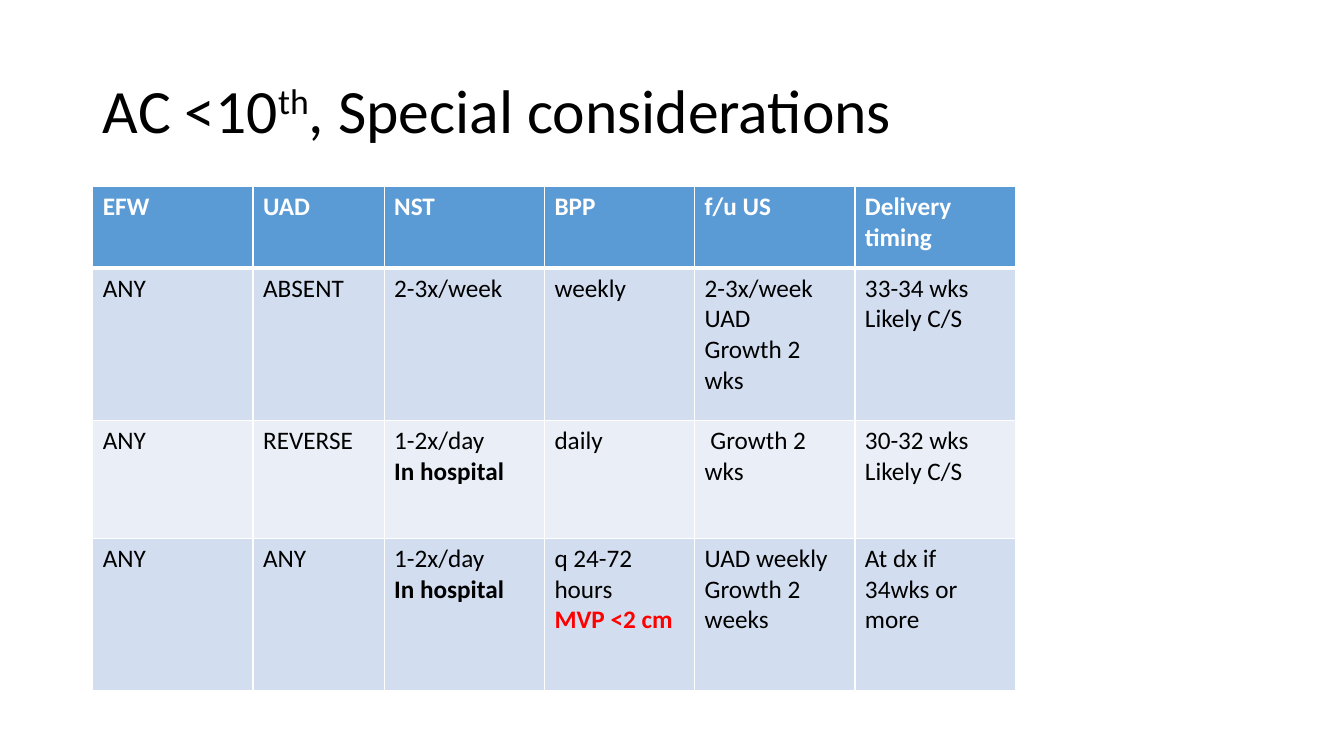
from lxml import etree
from pptx import Presentation
from pptx.dml.color import RGBColor
from pptx.enum.text import MSO_ANCHOR, MSO_AUTO_SIZE, PP_ALIGN
from pptx.oxml.ns import qn
from pptx.util import Inches, Pt

MIDDLE = MSO_ANCHOR.MIDDLE
NO_FIT = MSO_AUTO_SIZE.NONE
LEFT = PP_ALIGN.LEFT

BLACK = RGBColor(0x00, 0x00, 0x00)
WHITE = RGBColor(0xFF, 0xFF, 0xFF)
RED = RGBColor(0xFF, 0x00, 0x00)
HEADER_BLUE = RGBColor(0x5B, 0x9B, 0xD5)
BAND_DARK = RGBColor(0xD2, 0xDE, 0xEF)
BAND_LIGHT = RGBColor(0xEA, 0xEF, 0xF7)

TITLE = [("AC <10", False), ("th", True), (", Special considerations", False)]
COLUMN_WIDTHS = [1.59, 1.3, 1.59, 1.49, 1.59, 1.59]
ROW_HEIGHTS = [0.81, 1.51, 1.17, 1.51]
ROWS = [
    ["EFW", "UAD", "NST", "BPP", "f/u US", "Delivery timing"],
    ["ANY", "ABSENT", "2-3x/week", "weekly",
     "2-3x/week UAD\nGrowth 2 wks", "33-34 wks\nLikely C/S"],
    ["ANY", "REVERSE", "1-2x/day\nIn hospital", "daily",
     " Growth 2 wks", "30-32 wks\nLikely C/S"],
    ["ANY", "ANY", "1-2x/day\nIn hospital", "q 24-72 hours\nMVP <2 cm",
     "UAD weekly\nGrowth 2 weeks", "At dx if 34wks or more"],
]
EMPHASIS = {"In hospital": BLACK, "MVP <2 cm": RED}


class SlideBuilder:
    font_name = "Calibri"
    title_size = 44
    table_size = 18

    def __init__(self, prs):
        self.s = prs.slides.add_slide(prs.slide_layouts[5])

    def style(self, r, size, color, bold=False):
        r.font.name = self.font_name
        r.font.size = Pt(size)
        r.font.color.rgb = color
        r.font.bold = bold

    def title(self, parts, left, top, width, height):
        sp = self.s.shapes.title
        sp.left, sp.top = Inches(left), Inches(top)
        sp.width, sp.height = Inches(width), Inches(height)
        tf = sp.text_frame
        tf.auto_size = NO_FIT
        tf.word_wrap = True
        tf.vertical_anchor = MIDDLE
        p = tf.paragraphs[0]
        p.alignment = LEFT
        p.line_spacing = 0.9
        for text, superscript in parts:
            r = p.add_run()
            r.text = text
            self.style(r, self.title_size, BLACK)
            if superscript:
                r._r.get_or_add_rPr().set("baseline", "30000")

    def borders(self, cell, top, bottom):
        tcPr = cell._tc.get_or_add_tcPr()
        for side, width in (("L", 1), ("R", 1), ("T", top), ("B", bottom)):
            ln = etree.SubElement(tcPr, qn(f"a:ln{side}"), w=str(Pt(width)))
            fill = etree.SubElement(ln, qn("a:solidFill"))
            etree.SubElement(fill, qn("a:srgbClr"), val=str(WHITE))

    def cell(self, cell, text, row):
        header = row == 0
        self.borders(cell, 3 if row == 1 else 1, 3 if header else 1)
        cell.fill.solid()
        band = BAND_DARK if row % 2 else BAND_LIGHT
        cell.fill.fore_color.rgb = HEADER_BLUE if header else band
        cell.text_frame.text = text
        for p in cell.text_frame.paragraphs:
            color = WHITE if header else EMPHASIS.get(p.text, BLACK)
            for r in p.runs:
                self.style(r, self.table_size, color, header or p.text in EMPHASIS)

    def table(self, rows, widths, heights, left, top):
        frame = self.s.shapes.add_table(
            len(rows), len(widths), Inches(left), Inches(top),
            Inches(sum(widths)), Inches(sum(heights)))
        table = frame.table
        for column, width in zip(table.columns, widths):
            column.width = Inches(width)
        for i, (texts, height) in enumerate(zip(rows, heights)):
            table.rows[i].height = Inches(height)
            for j, text in enumerate(texts):
                self.cell(table.cell(i, j), text, i)


def main():
    prs = Presentation()
    prs.slide_width, prs.slide_height = Inches(13.33), Inches(7.5)
    builder = SlideBuilder(prs)
    builder.title(TITLE, 0.92, 0.4, 11.5, 1.45)
    builder.table(ROWS, COLUMN_WIDTHS, ROW_HEIGHTS, 0.92, 1.85)
    prs.save("out.pptx")


if __name__ == "__main__":
    main()
